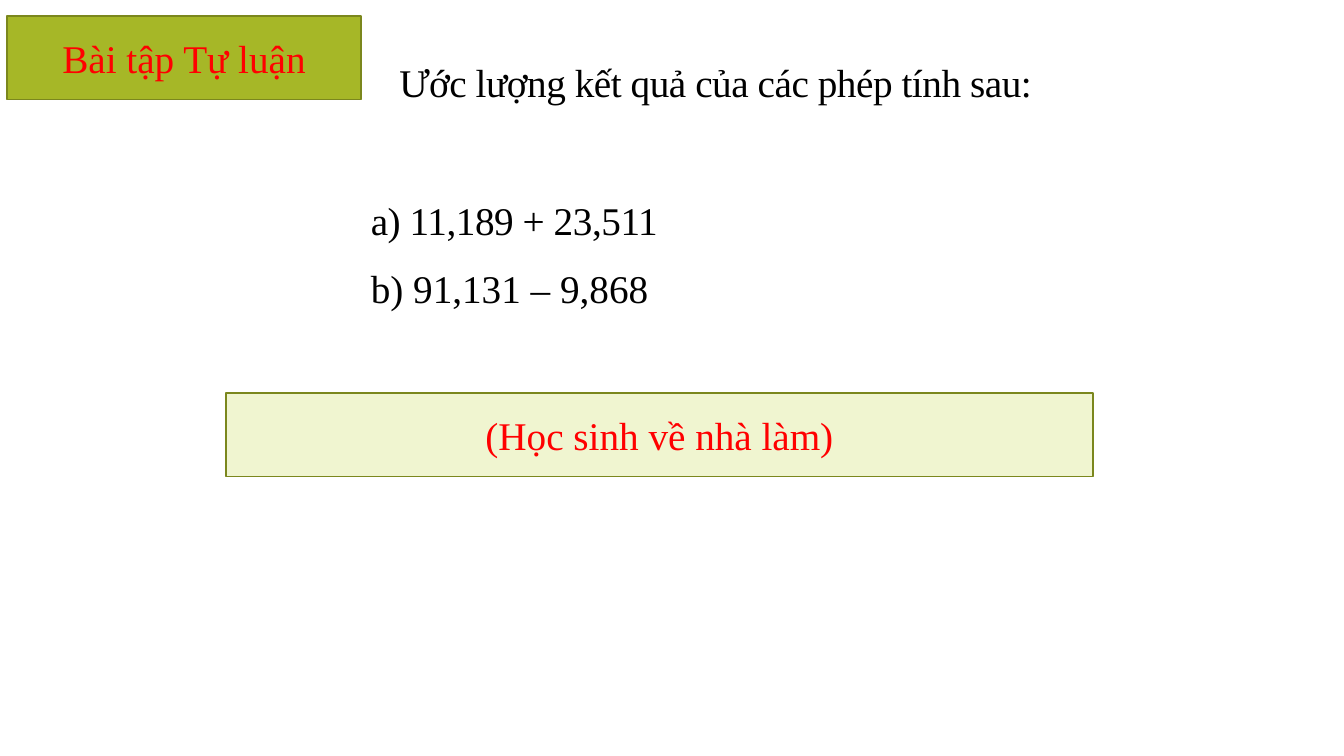
from pptx import Presentation, util as u
from pptx.dml.color import RGBColor
from pptx.enum import shapes, text

# Content
HEADING = "Bài tập Tự luận"
QUESTION = "Ước lượng kết quả của các phép tính sau:"
EXERCISES = ["a) 11,189 + 23,511", "b) 91,131 – 9,868"]
HOMEWORK = "(Học sinh về nhà làm)"

FONT, SIZE = "Times New Roman", 28
TIGHT = -30  # letter spacing, hundredths of a point
RED = RGBColor(0xFF, 0x00, 0x00)
BLACK = RGBColor(0x00, 0x00, 0x00)
OLIVE = RGBColor(0xA6, 0xB7, 0x27)
PALE_OLIVE = RGBColor(0xF0, 0xF5, 0xD0)
DARK_OLIVE = RGBColor(0x7B, 0x87, 0x1D)

# Layout in inches
WIDTH, HEIGHT = 13.33, 7.5
BANNER_HEIGHT = 0.83
HEADING_LEFT, HEADING_WIDTH = 0.07, 3.51
TEXT_LEFT = HEADING_LEFT + HEADING_WIDTH

deck = Presentation()
deck.slide_width, deck.slide_height = u.Inches(WIDTH), u.Inches(HEIGHT)
slide = deck.slides.add_slide(deck.slide_layouts[6])


def style(paragraph, color):
    paragraph.font.name = FONT
    paragraph.font.size = u.Pt(SIZE)
    paragraph.font.color.rgb = color


def add_banner(wording, left, top, width, fill):
    banner = slide.shapes.add_shape(
        shapes.MSO_SHAPE.RECTANGLE,
        *map(u.Inches, (left, top, width, BANNER_HEIGHT)))
    banner.shadow.inherit = False
    banner.fill.solid()
    banner.fill.fore_color.rgb = fill
    banner.line.color.rgb = DARK_OLIVE
    banner.line.width = u.Pt(1)
    frame = banner.text_frame
    frame.vertical_anchor = text.MSO_ANCHOR.MIDDLE
    paragraph = frame.paragraphs[0]
    paragraph.text = wording
    paragraph.alignment = text.PP_ALIGN.CENTER
    style(paragraph, RED)


def add_lines(lines, top, width, height, spacing, after=0, inset=0.1):
    frame = slide.shapes.add_textbox(
        *map(u.Inches, (TEXT_LEFT, top, width, height))).text_frame
    frame.word_wrap = True
    frame.auto_size = text.MSO_AUTO_SIZE.SHAPE_TO_FIT_TEXT
    frame.margin_left = u.Inches(inset)
    for i, (wording, tracking) in enumerate(lines):
        paragraph = frame.add_paragraph() if i else frame.paragraphs[0]
        run = paragraph.add_run()
        run.text = wording
        run._r.get_or_add_rPr().set("spc", str(tracking))
        paragraph.line_spacing = spacing
        paragraph.space_after = u.Pt(after)
        style(paragraph, BLACK)


# Heading and question
add_banner(HEADING, HEADING_LEFT, 0.16, HEADING_WIDTH, OLIVE)
add_lines([(QUESTION, TIGHT)], 0.44, 6.82, 0.62, 1.2, inset=0.38)

# Exercises
add_lines(zip(EXERCISES, (TIGHT, 0)), 1.83, 6.67, 1.33, 1.15, after=10)

# Homework note
add_banner(HOMEWORK, 2.24, 3.9, 8.6, PALE_OLIVE)

deck.save("out.pptx")
